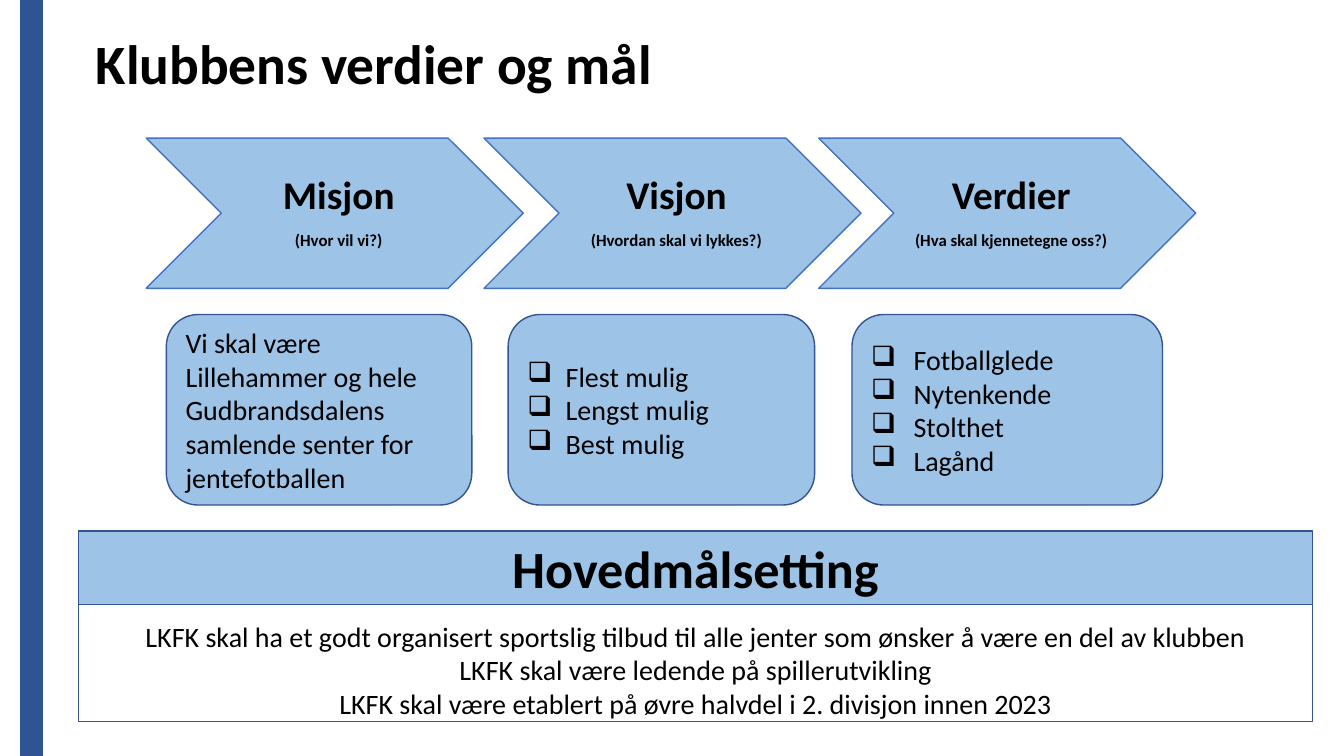
from lxml import etree
from pptx import Presentation
from pptx.dml.color import RGBColor
from pptx.enum import shapes, text
from pptx.oxml import ns
from pptx.util import Inches, Pt

TITLE = "Klubbens verdier og mål"
# heading, question, chevron left, box left, box width, bullet indent, box lines
PILLARS = [
    ("Misjon", "(Hvor vil vi?)", 1.45, 1.65, 3.03, 0,
     ["Vi skal være Lillehammer og hele Gudbrandsdalens samlende senter for jentefotballen"]),
    ("Visjon", "(Hvordan skal vi lykkes?)", 4.8, 5.04, 3.04, 0.38,
     ["Flest mulig", "Lengst mulig", "Best mulig"]),
    ("Verdier", "(Hva skal kjennetegne oss?)", 8.12, 8.45, 3.08, 0.42,
     ["Fotballglede", "Nytenkende", "Stolthet", "Lagånd"]),
]
GOAL_HEADING = "Hovedmålsetting"
GOALS = [
    "LKFK skal ha et godt organisert sportslig tilbud til alle jenter som ønsker å være en del av klubben",
    "LKFK skal være ledende på spillerutvikling",
    "LKFK skal være etablert på øvre halvdel i 2. divisjon innen 2023",
]

FONT = "Calibri"
BLACK = RGBColor(0x00, 0x00, 0x00)
LIGHT_BLUE = RGBColor(0x9D, 0xC3, 0xE6)
CHEVRON_LINE = RGBColor(0x44, 0x72, 0xC4)
BOX_LINE = RGBColor(0x32, 0x54, 0x91)
BAR_FILL = RGBColor(0x2F, 0x54, 0x96)
BAR_LINE = RGBColor(0x31, 0x53, 0x8F)

LEFT, CENTER = text.PP_ALIGN.LEFT, text.PP_ALIGN.CENTER
RECT = shapes.MSO_SHAPE.RECTANGLE
CHEVRON = shapes.MSO_SHAPE.CHEVRON
ROUNDED = shapes.MSO_SHAPE.ROUNDED_RECTANGLE


def add_box(slide, kind, place, fill, line):
    box = slide.shapes.add_shape(kind, *map(Inches, place))
    box.shadow.inherit = False
    if fill is None:
        box.fill.background()
    else:
        box.fill.solid()
        box.fill.fore_color.rgb = fill
    box.line.color.rgb = line
    box.line.width = Pt(1)
    return box


def add_bullet(para, indent):
    """Give the paragraph a hanging check-box bullet."""
    props = para._p.get_or_add_pPr()
    props.set("marL", str(Inches(indent)))
    props.set("indent", str(-Inches(indent)))
    etree.SubElement(props, ns.qn("a:buChar")).set("char", "❑")


def write(shape, lines, align, indent=0):
    """Fill the shape with (wording, size, bold) lines, one paragraph each."""
    frame = shape.text_frame
    frame.word_wrap = True
    frame.auto_size = text.MSO_AUTO_SIZE.NONE
    frame.vertical_anchor = text.MSO_ANCHOR.MIDDLE
    for i, (wording, size, bold) in enumerate(lines):
        para = frame.paragraphs[0] if i == 0 else frame.add_paragraph()
        para.alignment = align
        if indent:
            add_bullet(para, indent)
        span = para.add_run()
        span.text = wording
        span.font.name = FONT
        span.font.size = Pt(size)
        span.font.bold = bold
        span.font.color.rgb = BLACK
    return frame


deck = Presentation()
deck.slide_width, deck.slide_height = Inches(13.33), Inches(7.5)
page = deck.slides.add_slide(deck.slide_layouts[5])

title = page.shapes.title
title.left, title.top, title.width, title.height = map(Inches, (0.85, 0.36, 11.62, 0.61))
write(title, [(TITLE, 39.6, True)], LEFT).paragraphs[0].line_spacing = 0.9

add_box(page, RECT, (0.21, 0, 0.21, 7.5), BAR_FILL, BAR_LINE)

for heading, question, chevron_left, box_left, box_width, indent, lines in PILLARS:
    chevron = add_box(page, CHEVRON, (chevron_left, 1.37, 3.74, 1.49), LIGHT_BLUE, CHEVRON_LINE)
    frame = write(chevron, [(heading, 28, True), (question, 12, True)], CENTER)
    frame.margin_left = Inches(0.12)
    frame.margin_right = frame.margin_top = frame.margin_bottom = Inches(0.04)
    for para, gap in zip(frame.paragraphs, (10, 4)):
        para.line_spacing = 0.9
        para.space_after = Pt(gap)

    box = add_box(page, ROUNDED, (box_left, 3.12, box_width, 1.89), LIGHT_BLUE, BOX_LINE)
    write(box, [(line, 20, False) for line in lines], LEFT, indent)

goal_bar = add_box(page, RECT, (0.78, 5.27, 12.24, 0.73), LIGHT_BLUE, BOX_LINE)
write(goal_bar, [(GOAL_HEADING, 37.3, True)], CENTER)

goal_box = add_box(page, RECT, (0.78, 6, 12.24, 1.16), None, BOX_LINE)
frame = write(goal_box, [(goal, 20, False) for goal in GOALS], CENTER)
frame.margin_top, frame.margin_bottom = Inches(0.13), 0

deck.save("out.pptx")
